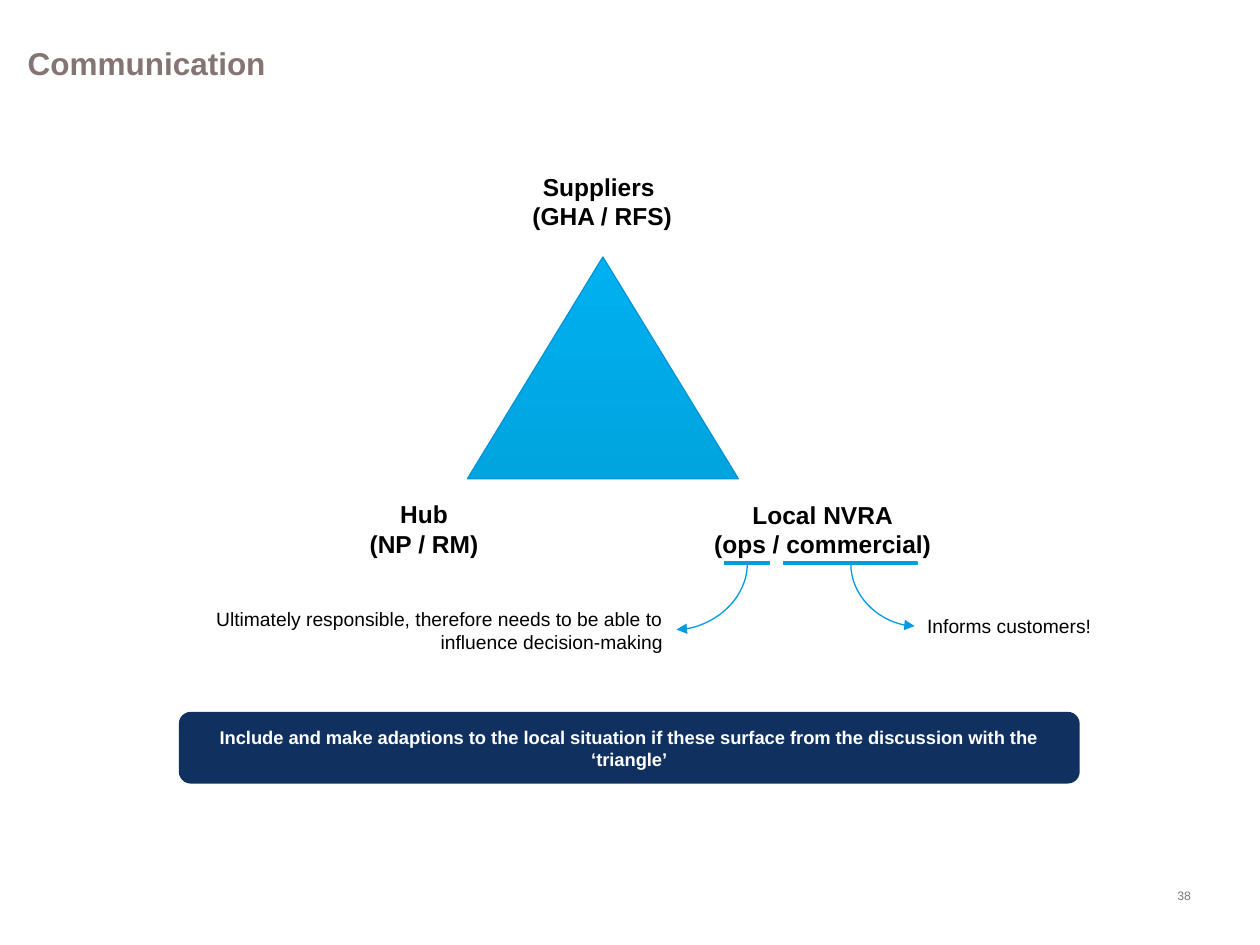
"""Build the Communication slide: a triangle of parties with notes and a banner."""
from typing import NamedTuple

from lxml import etree
from pptx import Presentation
from pptx.dml.color import RGBColor
from pptx.enum.shapes import MSO_CONNECTOR, MSO_SHAPE
from pptx.enum.text import MSO_ANCHOR, MSO_AUTO_SIZE, PP_ALIGN
from pptx.oxml.ns import qn
from pptx.util import Pt

LEFT, CENTER, RIGHT = PP_ALIGN.LEFT, PP_ALIGN.CENTER, PP_ALIGN.RIGHT
MIDDLE = MSO_ANCHOR.MIDDLE
NO_AUTOFIT = MSO_AUTO_SIZE.NONE
TRIANGLE, BAR, ROUNDED = MSO_SHAPE.ISOSCELES_TRIANGLE, MSO_SHAPE.RECTANGLE, MSO_SHAPE.ROUNDED_RECTANGLE
CURVE = MSO_CONNECTOR.CURVE

FONT = "Arial"
BLACK, WHITE, TAUPE = "000000", "FFFFFF", "847472"
SKY, NAVY, EDGE = "009BE1", "10315F", "0094D8"
SKY_TOP, SKY_BOTTOM = "00B0F0", "00A4DE"


class Box(NamedTuple):
    left: float
    top: float
    width: float
    height: float


class Label(NamedTuple):
    text: str
    box: Box
    size: float
    align: PP_ALIGN = CENTER
    bold: bool = False
    color: str = BLACK


class Arrow(NamedTuple):
    start: tuple[float, float]
    end: tuple[float, float]


TITLE_BOX = Box(8.64, 9.36, 620.64, 56.16)
TRIANGLE_BOX = Box(267.1, 146.9, 154.8, 126.7)
BANNER_BOX = Box(102.2, 406.8, 514.8, 41)
BANNER = ("Include and make adaptions to the local situation if these surface "
          "from the discussion with the ‘triangle’")

LABELS = [
    Label("Suppliers \n(GHA / RFS)", Box(256.3, 88.6, 175.7, 52.6), 14, bold=True),
    Label("Hub\n(NP / RM)", Box(187.9, 290.9, 108.7, 22.3), 14, bold=True),
    Label("Local NVRA\n(ops / commercial)", Box(385.9, 274.3, 168.5, 56.2), 14, bold=True),
    Label("Ultimately responsible, therefore needs to be able to influence decision-making",
          Box(76.3, 350.7, 309.6, 18.7), 11, RIGHT),
    Label("Informs customers!", Box(522.7, 348.5, 156.2, 18.7), 11, LEFT),
    Label("38", Box(629.3, 504, 58.3, 15.8), 7, RIGHT, color=TAUPE),
]
UNDERLINES = [Box(414, 321.1, 25.9, 1.44), Box(447.8, 321.1, 76.3, 1.44)]
ARROWS = [Arrow((427, 322.2), (386.6, 359.8)), Arrow((486.2, 322.2), (522.7, 357.8))]


def rgb(color: str) -> RGBColor:
    return RGBColor.from_string(color)


def lengths(box: Box) -> list[Pt]:
    return [Pt(value) for value in box]


def write(frame, text: str, *, size: float, align=CENTER, bold=False,
          color=BLACK, spacing: float | None = None) -> None:
    frame.text = text
    frame.word_wrap = True
    frame.auto_size = NO_AUTOFIT
    frame.vertical_anchor = MIDDLE
    for paragraph in frame.paragraphs:
        paragraph.alignment = align
        paragraph.line_spacing = spacing
        font = paragraph.font
        font.name, font.size, font.bold = FONT, Pt(size), bold
        font.color.rgb = rgb(color)


def draw_label(slide, label: Label) -> None:
    frame = slide.shapes.add_textbox(*lengths(label.box)).text_frame
    write(frame, label.text, size=label.size, align=label.align,
          bold=label.bold, color=label.color)


def draw_shape(slide, kind: MSO_SHAPE, box: Box, fill: str, line: str | None = None):
    shape = slide.shapes.add_shape(kind, *lengths(box))
    shape.shadow.inherit = False
    shape.fill.solid()
    shape.fill.fore_color.rgb = rgb(fill)
    if line:
        shape.line.color.rgb = rgb(line)
        shape.line.width = Pt(0.75)
    else:
        shape.line.fill.background()
    return shape


def draw_triangle(slide) -> None:
    fill = draw_shape(slide, TRIANGLE, TRIANGLE_BOX, SKY_TOP, EDGE).fill
    fill.gradient()
    fill.gradient_angle = 270
    for stop, color in zip(fill.gradient_stops, (SKY_TOP, SKY_BOTTOM)):
        stop.color.rgb = rgb(color)


def draw_arrow(slide, arrow: Arrow) -> None:
    """Draw a quarter curve that leaves downwards, as a turned two-point curve."""
    (x1, y1), (x2, y2) = arrow
    middle_x, middle_y = (x1 + x2) / 2, (y1 + y2) / 2
    rightward = x2 > x1
    half_width = (y2 - y1) / 2 * (-1 if rightward else 1)
    half_height = abs(x2 - x1) / 2
    connector = slide.shapes.add_connector(
        CURVE, Pt(middle_x - half_width), Pt(middle_y - half_height),
        Pt(middle_x + half_width), Pt(middle_y + half_height))
    connector.line.color.rgb = rgb(SKY)
    connector.line.width = Pt(0.75)
    properties = connector._element.spPr
    properties.find(qn("a:xfrm")).set("rot", str((270 if rightward else 90) * 60000))
    properties.find(qn("a:prstGeom")).set("prst", "curvedConnector2")
    etree.SubElement(properties.find(qn("a:ln")), qn("a:tailEnd"), type="triangle")
    etree.SubElement(properties, qn("a:effectLst"))


def main() -> None:
    deck = Presentation()
    deck.slide_width, deck.slide_height = Pt(720), Pt(540)
    slide = deck.slides.add_slide(deck.slide_layouts[5])

    title = slide.shapes.title
    title.left, title.top, title.width, title.height = lengths(TITLE_BOX)
    write(title.text_frame, "Communication", size=18, align=LEFT, bold=True,
          color=TAUPE, spacing=0.9)

    draw_triangle(slide)
    for label in LABELS:
        draw_label(slide, label)
    for arrow in ARROWS:
        draw_arrow(slide, arrow)
    for underline in UNDERLINES:
        draw_shape(slide, BAR, underline, SKY, SKY)
    banner = draw_shape(slide, ROUNDED, BANNER_BOX, NAVY)
    write(banner.text_frame, BANNER, size=10.5, bold=True, color=WHITE)

    deck.save("out.pptx")


if __name__ == "__main__":
    main()
